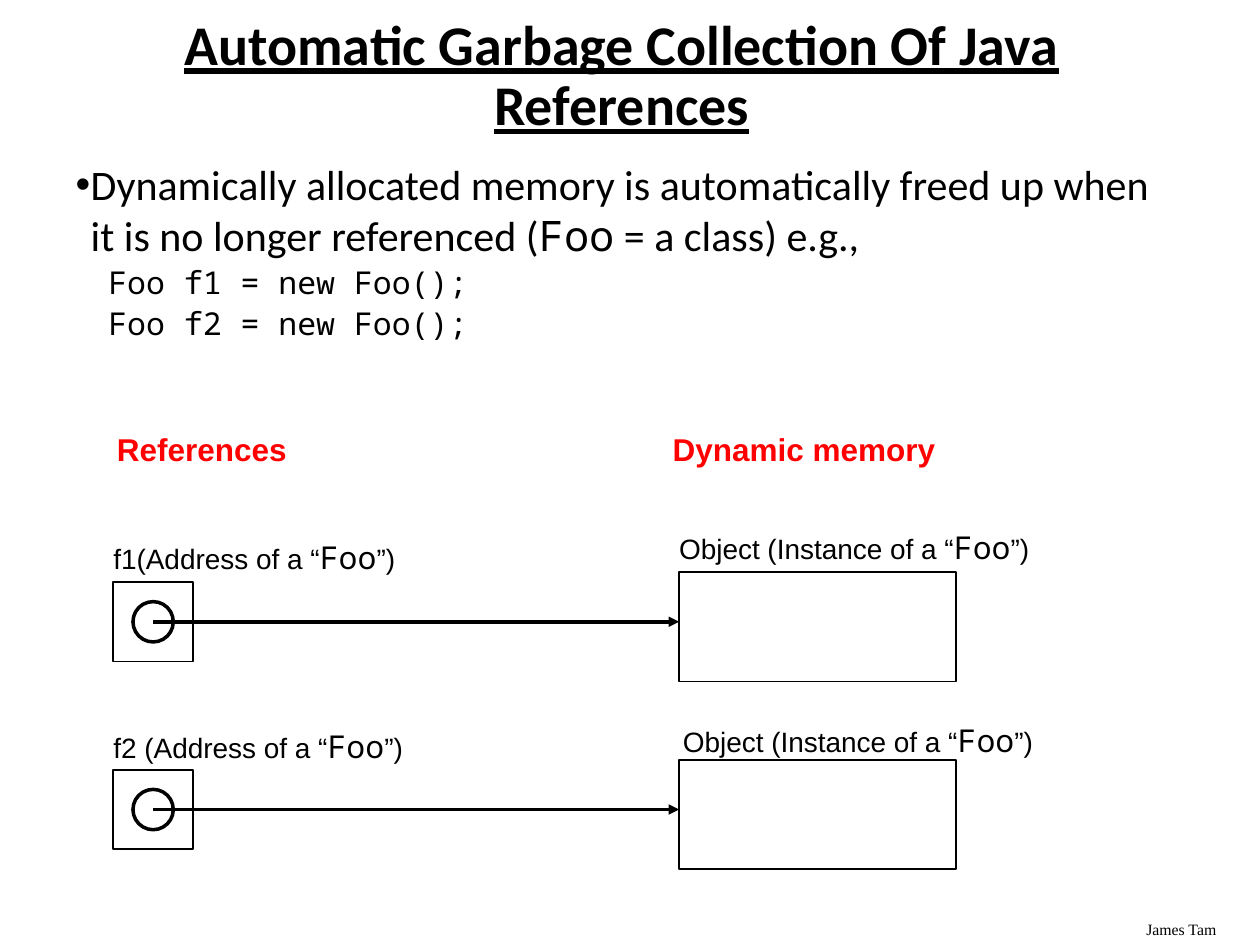
from dataclasses import dataclass

from lxml.etree import SubElement
from pptx import Presentation
from pptx.dml.color import RGBColor
from pptx.enum.shapes import MSO_CONNECTOR, MSO_SHAPE
from pptx.enum.text import MSO_ANCHOR, MSO_AUTO_SIZE, PP_ALIGN
from pptx.oxml.ns import qn
from pptx.util import Inches, Pt


@dataclass(frozen=True)
class Theme:
    ink: RGBColor = RGBColor(0, 0, 0)
    accent: RGBColor = RGBColor(255, 0, 0)
    heading: str = "Calibri"
    code: str = "Noto Sans Mono"
    diagram: str = "Arial"
    credit: str = "Times New Roman"
    title_size: int = 32
    body_size: int = 24
    code_size: int = 18
    label_size: int = 16
    credit_size: int = 9


THEME = Theme()

# Content: each run is (text, font, size)
TITLE = "Automatic Garbage Collection Of Java References"
POINT = [
    ("Dynamically allocated memory is automatically freed up when it is no longer referenced (",
     THEME.heading, THEME.body_size),
    ("Foo", THEME.code, THEME.body_size),
    (" = a class) e.g.,", THEME.heading, THEME.body_size),
]
CODE_LINES = ["Foo f1 = new Foo();", "Foo f2 = new Foo();"]
COLUMN_HEADINGS = [("References", 0.83, 1.57), ("Dynamic memory", 5.24, 2.6)]
# Label start, then left and top of the label, for both columns of each row
ROWS = [
    (("f1(Address of a “", 0.9, 4.22), ("Object (Instance of a “", 5.39, 4.14)),
    (("f2 (Address of a “", 0.9, 5.72), ("Object (Instance of a “", 5.42, 5.67)),
]
CREDIT = "James Tam"

# Diagram grid, in inches
REFERENCE_X, OBJECT_X = 0.9, 5.39
FIRST_ROW_CENTRE, ROW_PITCH = 4.935, 1.49
REFERENCE_SIDE, POINTER_SIZE = 0.63, 0.32
OBJECT_W, OBJECT_H, OBJECT_RISE = 2.2, 0.87, 0.395
LABEL_WIDTHS = (2.6, 3.11)


def add_run(paragraph, text, font, size, color=THEME.ink, bold=None, underline=None):
    run = paragraph.add_run()
    run.text = text
    run.font.name, run.font.size = font, Pt(size)
    run.font.bold, run.font.underline = bold, underline
    run.font.color.rgb = color


def place(shape, left, top, width, height):
    shape.left, shape.top = Inches(left), Inches(top)
    shape.width, shape.height = Inches(width), Inches(height)


def add_text(slide, left, top, width, height, inset=0.1):
    frame = slide.shapes.add_textbox(
        Inches(left), Inches(top), Inches(width), Inches(height)).text_frame
    frame.word_wrap = True
    frame.margin_left = Inches(inset)
    return frame.paragraphs[0]


def add_outline(slide, preset, left, top, width, height, weight):
    outline = slide.shapes.add_shape(
        preset, Inches(left), Inches(top), Inches(width), Inches(height))
    outline.shadow.inherit = False
    outline.fill.background()
    outline.line.color.rgb = THEME.ink
    outline.line.width = Pt(weight)


def add_arrow(slide, start_x, end_x, y):
    arrow = slide.shapes.add_connector(
        MSO_CONNECTOR.STRAIGHT, Inches(start_x), Inches(y), Inches(end_x), Inches(y))
    arrow.line.color.rgb = THEME.ink
    arrow.line.width = Pt(2)
    SubElement(arrow.line._get_or_add_ln(), qn("a:tailEnd"), type="triangle")
    SubElement(arrow._element.spPr, qn("a:effectLst"))


def set_bullet(paragraph, margin, indent, bullet=None):
    properties = paragraph._p.get_or_add_pPr()
    properties.set("marL", str(Inches(margin)))
    properties.set("indent", str(Inches(indent)))
    if bullet:
        SubElement(properties, qn("a:buChar"), char=bullet)
    else:
        SubElement(properties, qn("a:buNone"))


def fill_title(title):
    place(title, 0.47, 0.33, 8.93, 0.57)
    frame = title.text_frame
    frame.auto_size = MSO_AUTO_SIZE.NONE
    frame.vertical_anchor = MSO_ANCHOR.MIDDLE
    heading = frame.paragraphs[0]
    heading.alignment, heading.line_spacing = PP_ALIGN.CENTER, 0.9
    add_run(heading, TITLE, THEME.heading, THEME.title_size, bold=True, underline=True)


def fill_body(body):
    place(body, 0.5, 1.21, 8.94, 5.87)
    frame = body.text_frame
    frame.auto_size = MSO_AUTO_SIZE.NONE
    point = frame.paragraphs[0]
    point.space_before = Pt(0)
    set_bullet(point, 0.12, -0.12, "•")
    for text, font, size in POINT:
        add_run(point, text, font, size)
    for code in CODE_LINES:
        line = frame.add_paragraph()
        line.level, line.space_before = 1, Pt(2)
        set_bullet(line, 0.26, 0)
        add_run(line, code, THEME.code, THEME.code_size)


def add_reference_row(slide, labels, centre):
    # Reference cell, its pointer and the object it refers to
    pointer_x = REFERENCE_X + REFERENCE_SIDE / 2
    add_outline(slide, MSO_SHAPE.RECTANGLE, REFERENCE_X, centre - REFERENCE_SIDE / 2,
                REFERENCE_SIDE, REFERENCE_SIDE, 1)
    add_outline(slide, MSO_SHAPE.OVAL, pointer_x - POINTER_SIZE / 2,
                centre - POINTER_SIZE / 2, POINTER_SIZE, POINTER_SIZE, 2)
    add_outline(slide, MSO_SHAPE.RECTANGLE, OBJECT_X, centre - OBJECT_RISE,
                OBJECT_W, OBJECT_H, 1)
    add_arrow(slide, pointer_x, OBJECT_X, centre)
    for (opening, left, top), width in zip(labels, LABEL_WIDTHS):
        label = add_text(slide, left, top, width, 0.4, inset=0)
        add_run(label, opening, THEME.diagram, THEME.label_size)
        add_run(label, "Foo", THEME.code, THEME.code_size)
        add_run(label, "”)", THEME.diagram, THEME.label_size)


def main():
    deck = Presentation()
    deck.slide_width, deck.slide_height = Inches(10), Inches(7.5)
    slide = deck.slides.add_slide(deck.slide_layouts[1])

    # Title and list
    fill_title(slide.shapes.title)
    fill_body(slide.placeholders[1])

    # Memory diagram
    for heading, left, width in COLUMN_HEADINGS:
        add_run(add_text(slide, left, 3.36, width, 0.41), heading, THEME.diagram,
                THEME.code_size, THEME.accent, bold=True)
    for row, labels in enumerate(ROWS):
        add_reference_row(slide, labels, FIRST_ROW_CENTRE + row * ROW_PITCH)

    # Credit
    add_run(add_text(slide, 9, 7.25, 1, 0.25), CREDIT, THEME.credit, THEME.credit_size)

    deck.save("out.pptx")


if __name__ == "__main__":
    main()
